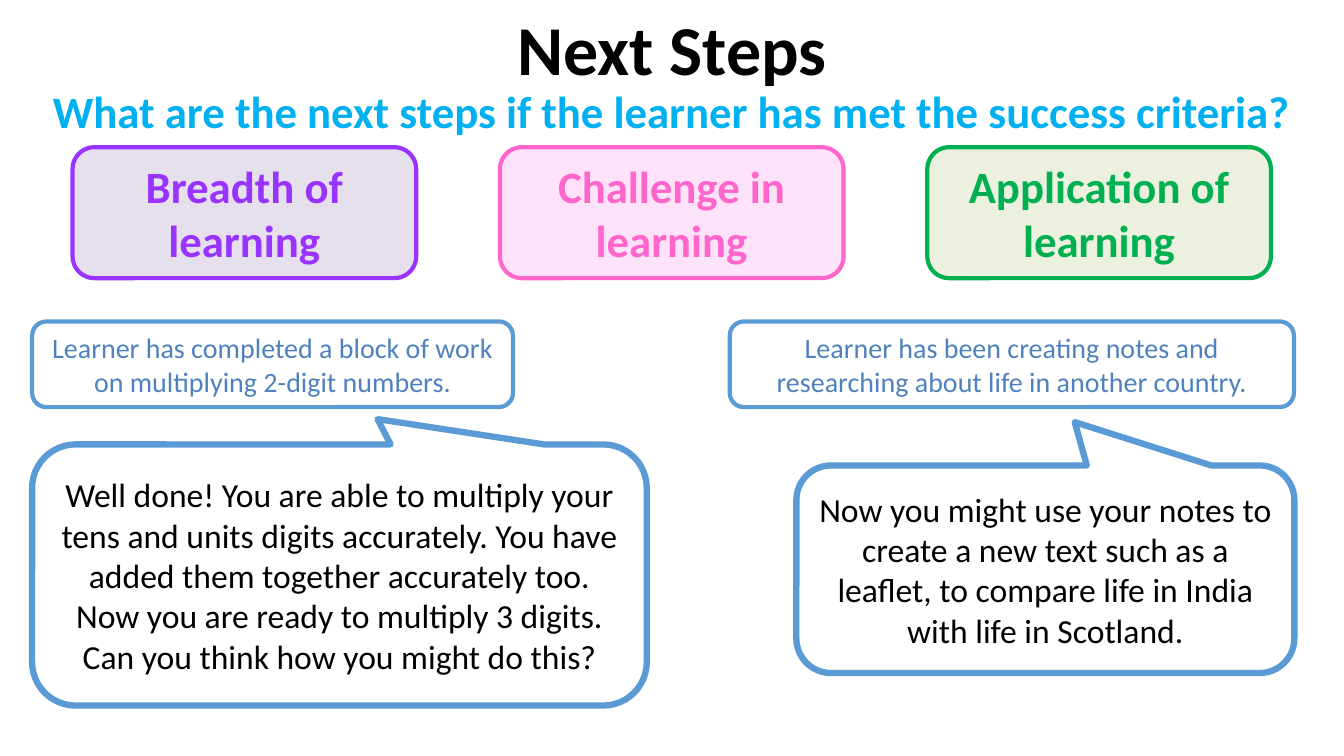
from pptx import Presentation
from pptx.dml.color import RGBColor as RGB
from pptx.enum.shapes import MSO_SHAPE as Shape
from pptx.enum.text import MSO_ANCHOR as Anchor, MSO_AUTO_SIZE as Fit, PP_ALIGN as Align
from pptx.util import Cm, Pt

COLORS = {
    "black": "000000", "sky": "00B0F0", "blue": "5B9BD5", "steel": "4F81BD",
    "purple": "9933FF", "lilac": "E6E0EC", "pink": "FF66CC", "rose": "FEE2F9",
    "green": "00B050", "lime": "EBF1DE",
}


def paint(name):
    return RGB.from_string(COLORS[name])


def write(shape, lines, size, color, bold=False, anchor=Anchor.TOP):
    frame = shape.text_frame
    frame.word_wrap = True
    frame.auto_size = Fit.NONE
    frame.vertical_anchor = anchor
    frame.text = "\n".join(lines)
    for para in frame.paragraphs:
        para.alignment = Align.CENTER
        para.font.name = "Calibri"
        para.font.size = Pt(size)
        para.font.bold = bold
        para.font.color.rgb = paint(color)


def add_title(slide, text):
    title = slide.shapes.title
    title.left, title.top, title.width, title.height = Cm(0), Cm(0.41), Cm(33.87), Cm(2.13)
    write(title, [text], 50, "black", True)
    title.text_frame.paragraphs[0].line_spacing = 0.8


def add_lead(slide, text):
    box = slide.shapes.add_textbox(Cm(0), Cm(1.98), Cm(33.87), Cm(1.63))
    write(box, [text], 32, "sky", True)


def add_box(slide, kind, place, line, weight, fill=None):
    box = slide.shapes.add_shape(kind, *map(Cm, place))
    box.shadow.inherit = False
    box.line.color.rgb = paint(line)
    box.line.width = Pt(weight)
    if fill:
        box.fill.solid()
        box.fill.fore_color.rgb = paint(fill)
    else:
        box.fill.background()
    return box


def add_theme(slide, index, text, color, fill):
    place = (1.83 + index * 10.77, 3.71, 8.66, 3.3)
    box = add_box(slide, Shape.ROUNDED_RECTANGLE, place, color, 3, fill)
    write(box, [text], 32, color, True)


def add_case(slide, left, width, text):
    box = add_box(slide, Shape.ROUNDED_RECTANGLE, (left, 8.1, width, 2.16), "blue", 3)
    write(box, [text], 20, "steel", anchor=Anchor.MIDDLE)


def add_speech(slide, place, tip, lines):
    box = add_box(slide, Shape.ROUNDED_RECTANGULAR_CALLOUT, place, "blue", 4.5)
    box.adjustments[0], box.adjustments[1] = tip
    write(box, lines, 24, "black", anchor=Anchor.MIDDLE)


def main():
    deck = Presentation()
    deck.slide_width, deck.slide_height = Cm(33.87), Cm(19.05)
    slide = deck.slides.add_slide(deck.slide_layouts[5])

    add_title(slide, "Next Steps")
    add_lead(slide, "What are the next steps if the learner has met the success criteria?")

    themes = [
        ("Breadth of learning", "purple", "lilac"),
        ("Challenge in learning", "pink", "rose"),
        ("Application of learning", "green", "lime"),
    ]
    for index, theme in enumerate(themes):
        add_theme(slide, index, *theme)

    add_case(slide, 0.81, 12.12,
             "Learner has completed a block of work on multiplying 2-digit numbers.")
    add_case(slide, 18.39, 14.22,
             "Learner has been creating notes and researching about life in another country.")

    add_speech(slide, (0.81, 11.2, 15.49, 6.58), (0.062, -0.597), [
        "Well done! You are able to multiply your tens and units digits accurately. "
        "You have added them together accurately too.",
        "Now you are ready to multiply 3 digits. Can you think how you might do this?",
    ])
    add_speech(slide, (20.07, 11.73, 12.55, 5.23), (0.059, -0.709), [
        "Now you might use your notes to create a new text such as a leaflet, "
        "to compare life in India with life in Scotland.",
    ])

    deck.save("out.pptx")


if __name__ == "__main__":
    main()
